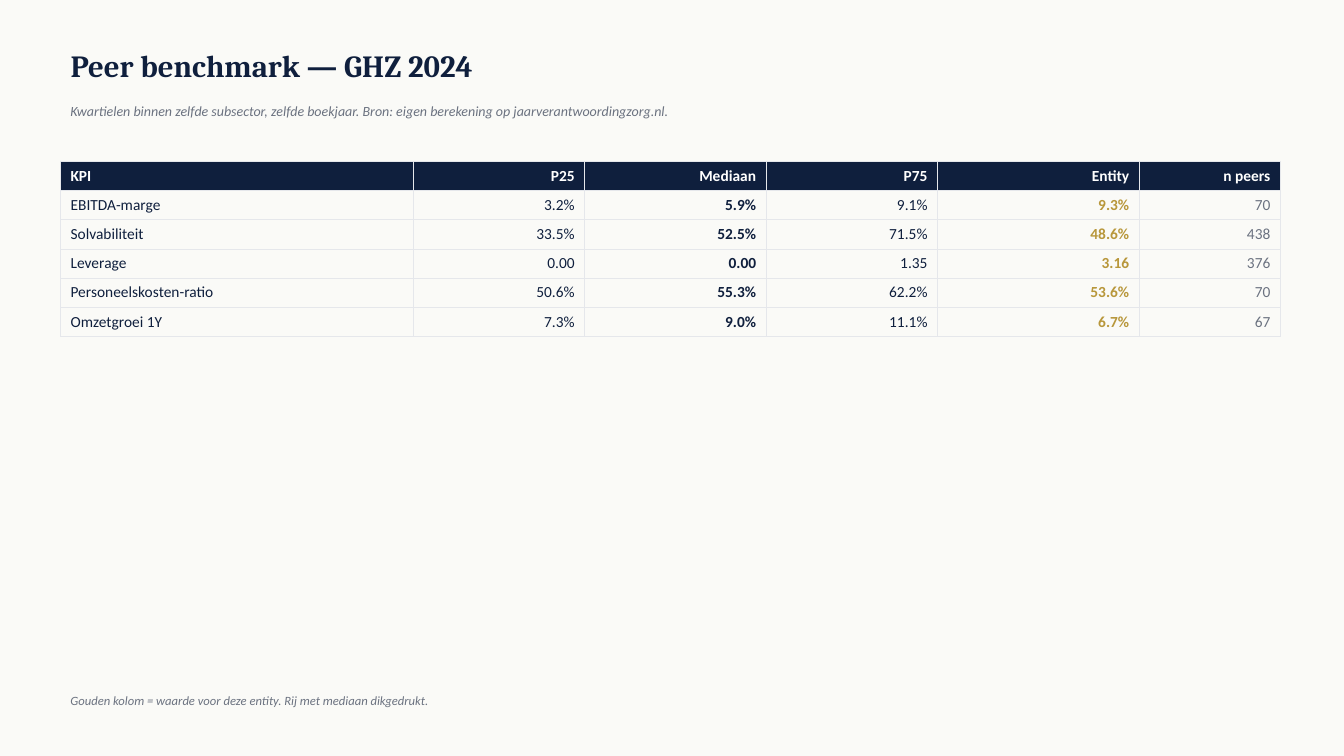
from lxml import etree
from pptx import Presentation
from pptx.dml.color import RGBColor
from pptx.enum.text import MSO_ANCHOR, MSO_AUTO_SIZE, PP_ALIGN
from pptx.oxml.ns import qn
from pptx.util import Emu, Pt

LEFT, RIGHT = PP_ALIGN.LEFT, PP_ALIGN.RIGHT
MIDDLE = MSO_ANCHOR.MIDDLE
NO_FIT = MSO_AUTO_SIZE.NONE
PX = 9144
NAVY, GOLD, GREY, WHITE = "0F1F3D", "B8973B", "6B7280", "FFFFFF"
PAPER, RULE = "FAFAF7", "E5E7EB"


def color(value):
    return RGBColor.from_string(value)


def set_text(tf, text, size, font, hue, bold=False, italic=False, align=LEFT):
    p = tf.paragraphs[0]
    p.text = text
    p.alignment = align
    p.font.size = Pt(size)
    p.font.name = font
    p.font.bold = bold
    p.font.italic = italic
    p.font.color.rgb = color(hue)


prs = Presentation()
prs.slide_width, prs.slide_height = Emu(1333 * PX), Emu(750 * PX)
s = prs.slides.add_slide(prs.slide_layouts[5])
s.background.fill.solid()
s.background.fill.fore_color.rgb = color(PAPER)

title = s.shapes.title
title.left, title.top, title.width, title.height = [Emu(v * PX) for v in (60, 40, 1200, 50)]
tf = title.text_frame
tf.auto_size = NO_FIT
tf.vertical_anchor = MIDDLE
set_text(tf, "Peer benchmark — GHZ 2024", 22, "Cambria", NAVY, bold=True)

notes = [
    (95, 10, "Kwartielen binnen zelfde subsector, zelfde boekjaar. "
             "Bron: eigen berekening op jaarverantwoordingzorg.nl."),
    (680, 9, "Gouden kolom = waarde voor deze entity. Rij met mediaan dikgedrukt."),
]
for top, size, text in notes:
    tf = s.shapes.add_textbox(*[Emu(v * PX) for v in (60, top, 1200, 30)]).text_frame
    tf.word_wrap = True
    tf.vertical_anchor = MIDDLE
    set_text(tf, text, size, "Calibri", GREY, italic=True)

columns = [
    ("KPI", 350, NAVY, False),
    ("P25", 170, NAVY, False),
    ("Mediaan", 180, NAVY, True),
    ("P75", 170, NAVY, False),
    ("Entity", 200, GOLD, True),
    ("n peers", 140, GREY, False),
]
rows = [
    [name for name, *_ in columns],
    ["EBITDA-marge", "3.2%", "5.9%", "9.1%", "9.3%", "70"],
    ["Solvabiliteit", "33.5%", "52.5%", "71.5%", "48.6%", "438"],
    ["Leverage", "0.00", "0.00", "1.35", "3.16", "376"],
    ["Personeelskosten-ratio", "50.6%", "55.3%", "62.2%", "53.6%", "70"],
    ["Omzetgroei 1Y", "7.3%", "9.0%", "11.1%", "6.7%", "67"],
]
row_height = 29
frame = s.shapes.add_table(len(rows), len(columns), Emu(60 * PX), Emu(160 * PX),
                           Emu(1210 * PX), Emu(len(rows) * row_height * PX))
table = frame.table
table.horz_banding = False
for i, values in enumerate(rows):
    table.rows[i].height = Emu(row_height * PX)
    for j, (name, width, hue, bold) in enumerate(columns):
        table.columns[j].width = Emu(width * PX)
        cell = table.cell(i, j)
        tcPr = cell._tc.get_or_add_tcPr()
        for side in ("a:lnL", "a:lnR", "a:lnT", "a:lnB"):
            ln = etree.SubElement(tcPr, qn(side), w=str(Pt(0.5)))
            fill = etree.SubElement(ln, qn("a:solidFill"))
            etree.SubElement(fill, qn("a:srgbClr"), val=RULE)
        if i == 0:
            cell.fill.solid()
            cell.fill.fore_color.rgb = color(NAVY)
            hue, bold = WHITE, True
        else:
            cell.fill.background()
        set_text(cell.text_frame, values[j], 11, "Calibri", hue, bold,
                 align=RIGHT if j else LEFT)

prs.save("out.pptx")
